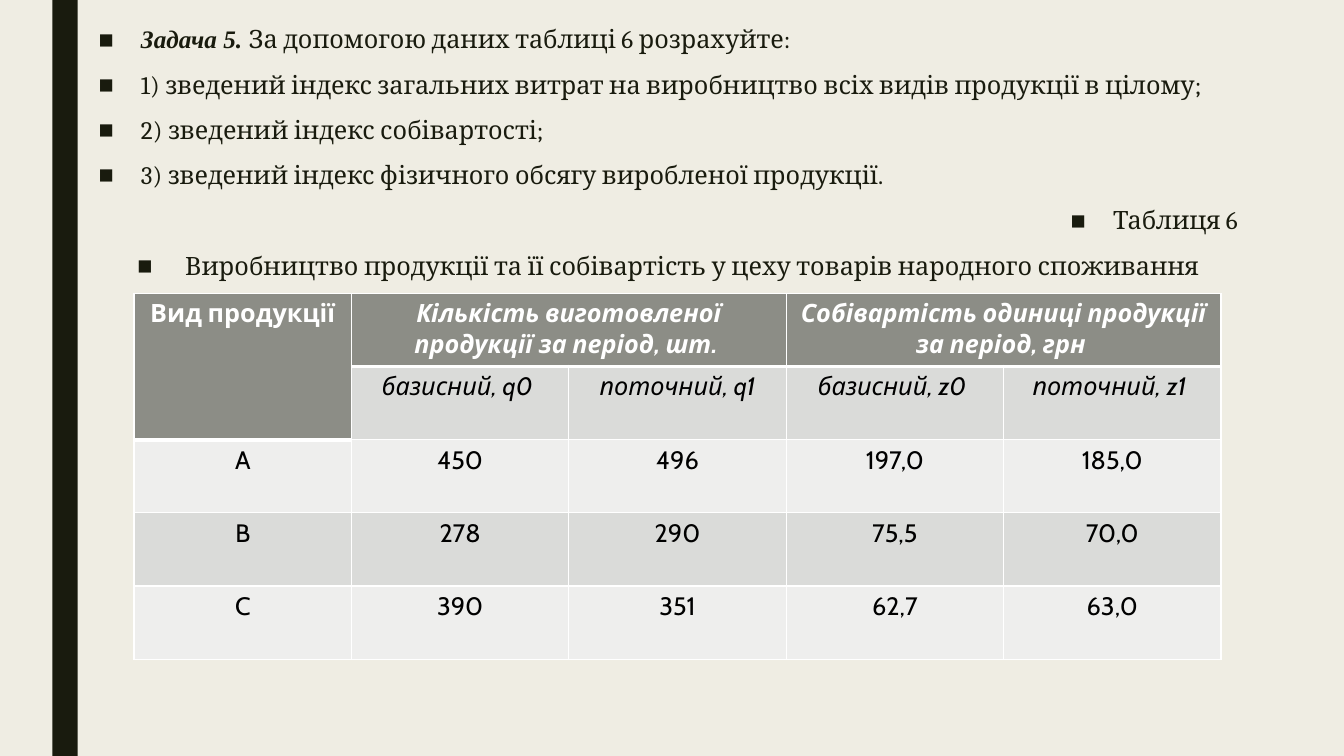
from lxml import etree
from pptx import Presentation
from pptx.dml.color import RGBColor
from pptx.enum import shapes, text
from pptx.oxml import ns
from pptx.util import Inches, Pt

BACKGROUND = RGBColor(0xEF, 0xED, 0xE3)
INK = RGBColor(0x19, 0x1B, 0x0E)
WHITE = RGBColor(0xFF, 0xFF, 0xFF)
BLACK = RGBColor(0, 0, 0)
HEADER = RGBColor(0x8C, 0x8D, 0x86)
DARK_BAND = RGBColor(0xDA, 0xDB, 0xD9)
LIGHT_BAND = RGBColor(0xEE, 0xEE, 0xED)

LEFT, CENTER, RIGHT = text.PP_ALIGN.LEFT, text.PP_ALIGN.CENTER, text.PP_ALIGN.RIGHT
TASK_LEAD = "Задача 5. "
TASK_LINES = [
    ("За допомогою даних таблиці 6 розрахуйте:", LEFT),
    ("1) зведений індекс загальних витрат на виробництво всіх видів продукції в цілому;", LEFT),
    ("2) зведений індекс собівартості;", LEFT),
    ("3) зведений індекс фізичного обсягу виробленої продукції.", LEFT),
    ("Таблиця 6 ", RIGHT),
    (" Виробництво продукції та її собівартість у цеху товарів народного споживання ", CENTER),
]
TABLE_ROWS = [
    ["Вид продукції", "Кількість виготовленої продукції за період, шт. ", "",
     "Собівартість одиниці продукції за період, грн ", ""],
    ["", "базисний, q0 ", "поточний, q1", "базисний, z0 ", "поточний, z1 "],
    ["A", "450", "496", "197,0", "185,0"],
    ["B", "278", "290", "75,5", "70,0"],
    ["C", "390", "351", "62,7", "63,0"],
]


def add_side_bar(slide):
    bar = slide.shapes.add_shape(shapes.MSO_SHAPE.RECTANGLE,
                                 Inches(0.52), 0, Inches(0.25), Inches(7.5))
    bar.shadow.inherit = False
    bar.fill.solid()
    bar.fill.fore_color.rgb = INK
    bar.line.fill.background()


def style_font(font, name, color, bold=False, italic=False):
    font.name, font.size = name, Pt(18)
    font.color.rgb = color
    font.bold, font.italic = bold, italic


def add_bullet(paragraph):
    properties = paragraph._p.get_or_add_pPr()
    properties.set("marL", str(Inches(0.42)))
    properties.set("indent", str(-Inches(0.42)))
    etree.SubElement(properties, ns.qn("a:buFont")).set("typeface", "Arial")
    etree.SubElement(properties, ns.qn("a:buChar")).set("char", "■")


def add_task(slide):
    box = slide.shapes.add_textbox(Inches(0.88), Inches(0.21), Inches(11.55), Inches(6.66))
    frame = box.text_frame
    frame.word_wrap = True
    for index, (line, alignment) in enumerate(TASK_LINES):
        paragraph = frame.add_paragraph() if index else frame.paragraphs[0]
        add_bullet(paragraph)
        paragraph.alignment = alignment
        paragraph.line_spacing = 0.94
        paragraph.space_before = Pt(10 if index else 0)
        paragraph.space_after = Pt(2)
        if index == 0:
            lead = paragraph.add_run()
            lead.text = TASK_LEAD
            style_font(lead.font, "Times New Roman", INK, bold=True, italic=True)
        run = paragraph.add_run()
        run.text = line
        style_font(run.font, "Cambria", INK)


def add_borders(cell, bottom_width):
    properties = cell._tc.get_or_add_tcPr()
    for side, width in (("L", 1), ("R", 1), ("T", 1), ("B", bottom_width)):
        line = etree.SubElement(properties, ns.qn("a:ln" + side), w=str(Pt(width)))
        fill = etree.SubElement(line, ns.qn("a:solidFill"))
        etree.SubElement(fill, ns.qn("a:srgbClr")).set("val", str(WHITE))


def style_cell(cell, content, row, column):
    is_header = row == 0 or (row == 1 and column == 0)
    has_thick_bottom = (row == 0 and column > 0) or (row < 2 and column == 0)
    add_borders(cell, 3 if has_thick_bottom else 1)
    cell.fill.solid()
    cell.fill.fore_color.rgb = HEADER if is_header else (DARK_BAND if row % 2 else LIGHT_BAND)
    cell.text_frame.text = content
    paragraph = cell.text_frame.paragraphs[0]
    paragraph.alignment = CENTER
    fonts = [run.font for run in paragraph.runs] or [paragraph.font]
    for font in fonts:
        style_font(font, "Cabin", WHITE if is_header else BLACK,
                   bold=is_header, italic=row < 2 and column > 0)


def add_production_table(slide):
    frame = slide.shapes.add_table(len(TABLE_ROWS), len(TABLE_ROWS[0]),
                                   Inches(1.33), Inches(2.91), Inches(10.78), Inches(3.63))
    table = frame.table
    table.first_row = table.horz_banding = False
    for row, contents in enumerate(TABLE_ROWS):
        for column, content in enumerate(contents):
            style_cell(table.cell(row, column), content, row, column)
    table.cell(0, 0).merge(table.cell(1, 0))
    for column in (1, 3):
        table.cell(0, column).merge(table.cell(0, column + 1))


def main():
    presentation = Presentation()
    presentation.slide_width, presentation.slide_height = Inches(13.33), Inches(7.5)
    slide = presentation.slides.add_slide(presentation.slide_layouts[6])
    slide.background.fill.solid()
    slide.background.fill.fore_color.rgb = BACKGROUND
    add_side_bar(slide)
    add_task(slide)
    add_production_table(slide)
    presentation.save("out.pptx")


if __name__ == "__main__":
    main()
